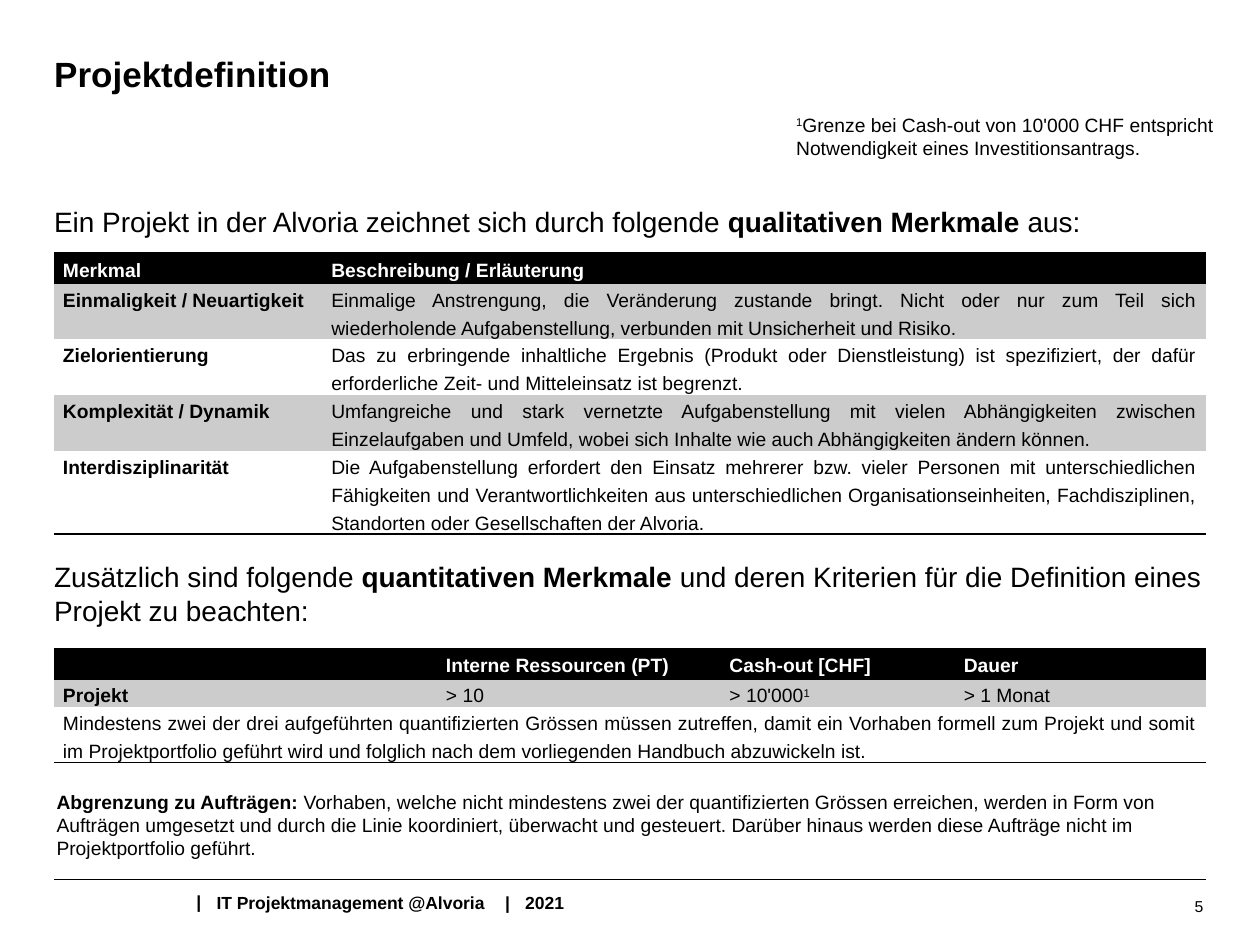
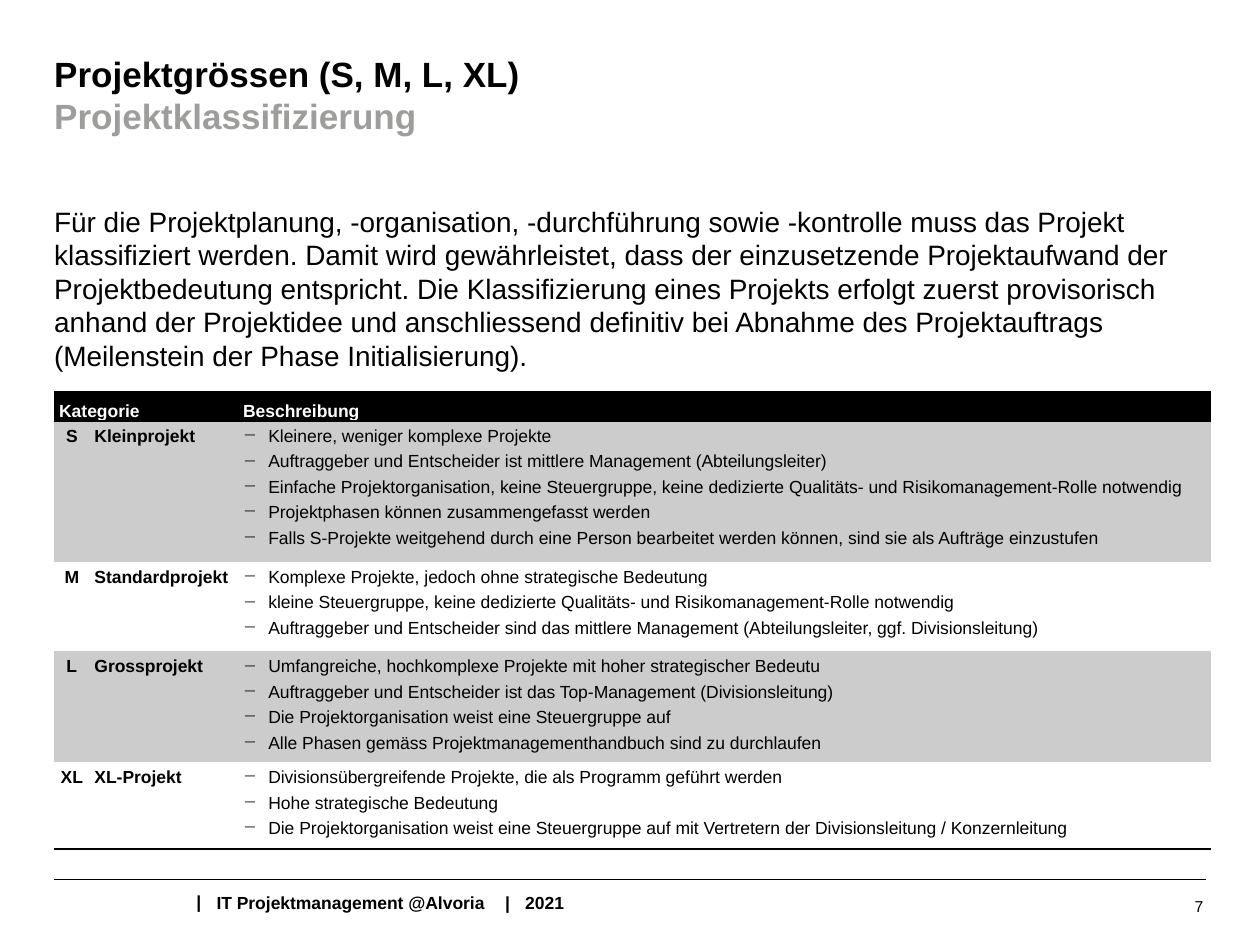
import pptx
import pptx.dml.color
import pptx.enum.shapes
import pptx.enum.text
import pptx.oxml.ns
import pptx.util
from lxml import etree
from pptx.util import Inches

BLACK, WHITE, BAND, SUBTITLE_GREY = "000000", "FFFFFF", "CCCCCC", "9D9D9C"
ALIGN = pptx.enum.text.PP_ALIGN
ANCHOR = pptx.enum.text.MSO_ANCHOR
NO_STYLE_NO_GRID = "{2D5ABB26-0587-4C30-8999-92F81FD0307C}"
qn = pptx.oxml.ns.qn
rgb = pptx.dml.color.RGBColor.from_string


def write(paragraph, text, size, color=BLACK, bold=False, **layout):
    """Fill a paragraph; *...* switches the weight, ^...^ is superscript."""
    for name, value in layout.items():
        setattr(paragraph, name, value)
    for i, part in enumerate(text.split("*")):
        for j, piece in enumerate(part.split("^")):
            if not piece:
                continue
            run = paragraph.add_run()
            run.text = piece
            font_format = {"name": "Arial", "size": pptx.util.Pt(size), "bold": bold != bool(i % 2)}
            for name, value in font_format.items():
                setattr(run.font, name, value)
            run.font.color.rgb = rgb(color)
            if j % 2:
                run._r.get_or_add_rPr().set("baseline", "30000")
    if not text:
        etree.SubElement(paragraph._p, qn("a:endParaRPr"), sz=str(size * 100))


def add_grid(slide, grid):
    """Add a table with black header, grey bands and a closing rule."""
    rows, widths, heights = grid["rows"], grid["widths"], grid["heights"]
    left, top = grid["at"]
    frame = slide.shapes.add_table(
        len(rows), len(widths), Inches(left), Inches(top),
        Inches(sum(widths)), Inches(sum(heights)))
    table = frame.table
    table._tbl.tblPr.find(qn("a:tableStyleId")).text = NO_STYLE_NO_GRID
    for column, width in zip(table.columns, widths):
        column.width = Inches(width)
    for row, height in zip(table.rows, heights):
        row.height = Inches(height)
    for r, c_first, c_last in grid["merges"]:
        table.cell(r, c_first).merge(table.cell(r, c_last))
    for r, texts in enumerate(rows):
        for c, content in enumerate(texts):
            cell = table.cell(r, c)
            cell_format = {
                "margin_left": Inches(grid["inset"]), "margin_right": Inches(grid["inset"]),
                "margin_top": 0, "margin_bottom": 0,
                "vertical_anchor": grid["header_anchor"] if r == 0 else ANCHOR.TOP}
            for name, value in cell_format.items():
                setattr(cell, name, value)
            for edge in (["a:lnT", "a:lnB"] if r == 0 else ["a:lnB"] if r == len(rows) - 1 else []):
                rule = etree.SubElement(cell._tc.get_or_add_tcPr(), qn(edge), w="12700")
                rule_fill = etree.SubElement(rule, qn("a:solidFill"))
                etree.SubElement(rule_fill, qn("a:srgbClr"), val=BLACK)
            if r == 0 or r % 2:
                cell.fill.solid()
                cell.fill.fore_color.rgb = rgb(BLACK if r == 0 else BAND)
            else:
                cell.fill.background()
            bulleted = isinstance(content, list)
            bold = r == 0 or (r, c) in grid["bold"]
            for k, line in enumerate(content if bulleted else [content]):
                frame_text = cell.text_frame
                paragraph = frame_text.add_paragraph() if k else frame_text.paragraphs[0]
                if bulleted:
                    properties = paragraph._p.get_or_add_pPr()
                    properties.set("marL", str(Inches(0.2)))
                    properties.set("indent", str(-Inches(0.2)))
                    etree.SubElement(properties, qn("a:buChar"), char="−")
                align = grid["aligns"][c] if r else grid["header_align"]
                write(paragraph, line, grid["size"], WHITE if r == 0 else BLACK, bold,
                      alignment=align, line_spacing=1.3)


qualitative = {
    "at": (0.43, 2.01), "widths": [2.13, 7.01], "heights": [0.24, 0.44, 0.44, 0.44, 0.66],
    "inset": 0.07, "size": 11, "merges": [], "bold": [(r, 0) for r in range(1, 5)],
    "header_anchor": ANCHOR.TOP, "header_align": ALIGN.JUSTIFY, "aligns": [ALIGN.JUSTIFY] * 2,
    "rows": [
        ["Merkmal", "Beschreibung / Erläuterung"],
        ["Einmaligkeit / Neuartigkeit",
         "Einmalige Anstrengung, die Veränderung zustande bringt. Nicht oder nur zum Teil sich "
         "wiederholende Aufgabenstellung, verbunden mit Unsicherheit und Risiko."],
        ["Zielorientierung",
         "Das zu erbringende inhaltliche Ergebnis (Produkt oder Dienstleistung) ist spezifiziert, "
         "der dafür erforderliche Zeit- und Mitteleinsatz ist begrenzt."],
        ["Komplexität / Dynamik",
         "Umfangreiche und stark vernetzte Aufgabenstellung mit vielen Abhängigkeiten zwischen "
         "Einzelaufgaben und Umfeld, wobei sich Inhalte wie auch Abhängigkeiten ändern können."],
        ["Interdisziplinarität",
         "Die Aufgabenstellung erfordert den Einsatz mehrerer bzw. vieler Personen mit "
         "unterschiedlichen Fähigkeiten und Verantwortlichkeiten aus unterschiedlichen "
         "Organisationseinheiten, Fachdisziplinen, Standorten oder Gesellschaften der Alvoria."],
    ],
}
quantitative = {
    "at": (0.43, 5.15), "widths": [3.04, 2.25, 1.86, 1.99], "heights": [0.24, 0.22, 0.44],
    "inset": 0.07, "size": 11, "merges": [(2, 0, 3)], "bold": [(1, 0)],
    "header_anchor": ANCHOR.TOP, "header_align": ALIGN.JUSTIFY, "aligns": [ALIGN.JUSTIFY] * 4,
    "rows": [
        ["", "Interne Ressourcen (PT)", "Cash-out [CHF]", "Dauer"],
        ["Projekt", "> 10", "> 10'000^1^", "> 1 Monat"],
        ["Mindestens zwei der drei aufgeführten quantifizierten Grössen müssen zutreffen, damit ein "
         "Vorhaben formell zum Projekt und somit im Projektportfolio geführt wird und folglich nach "
         "dem vorliegenden Handbuch abzuwickeln ist.", "", "", ""],
    ],
}
categories = {
    "at": (0.43, 3.11), "widths": [0.28, 1.18, 7.72], "heights": [0.23, 1.12, 0.71, 0.88, 0.69],
    "inset": 0.04, "size": 10, "merges": [(0, 0, 1)],
    "bold": [(r, c) for r in range(1, 5) for c in range(2)],
    "header_anchor": ANCHOR.BOTTOM, "header_align": ALIGN.LEFT,
    "aligns": [ALIGN.CENTER, ALIGN.LEFT, ALIGN.LEFT],
    "rows": [
        ["Kategorie", "", "Beschreibung"],
        ["S", "Kleinprojekt", [
            "Kleinere, weniger komplexe Projekte",
            "Auftraggeber und Entscheider ist mittlere Management (Abteilungsleiter)",
            "Einfache Projektorganisation, keine Steuergruppe, keine dedizierte Qualitäts- und "
            "Risikomanagement-Rolle notwendig",
            "Projektphasen können zusammengefasst werden",
            "Falls S-Projekte weitgehend durch eine Person bearbeitet werden können, sind sie als "
            "Aufträge einzustufen"]],
        ["M", "Standardprojekt", [
            "Komplexe Projekte, jedoch ohne strategische Bedeutung",
            "kleine Steuergruppe, keine dedizierte Qualitäts- und Risikomanagement-Rolle notwendig",
            "Auftraggeber und Entscheider sind das mittlere Management (Abteilungsleiter, ggf. "
            "Divisionsleitung)"]],
        ["L", "Grossprojekt", [
            "Umfangreiche, hochkomplexe Projekte mit hoher strategischer Bedeutu",
            "Auftraggeber und Entscheider ist das Top-Management (Divisionsleitung)",
            "Die Projektorganisation weist eine Steuergruppe auf",
            "Alle Phasen gemäss Projektmanagementhandbuch sind zu durchlaufen"]],
        ["XL", "XL-Projekt", [
            "Divisionsübergreifende Projekte, die als Programm geführt werden",
            "Hohe strategische Bedeutung",
            "Die Projektorganisation weist eine Steuergruppe auf mit Vertretern der "
            "Divisionsleitung / Konzernleitung"]],
    ],
}

TITLE_AREA, SUBTITLE_AREA, BODY_AREA = (0.43, 0.37, 9.14, 0.39), (0.43, 0.7, 9.14, 0.39), (0.43, 1.62, 9.14, 4.49)
HEADING_INSETS, BODY_INSETS = (0, 0.05, 0.1, 0.05), (0, 0, 0, 0)
HEADING, SUBHEADING = {"size": 20, "bold": True}, {"size": 20, "bold": True, "color": SUBTITLE_GREY}
BODY = {"size": 16}

pages = [
    {"layout": 1, "number": "5", "grids": [qualitative, quantitative],
     "placeholders": [
         (0, TITLE_AREA, HEADING_INSETS, HEADING, ["Projektdefinition"]),
         (1, BODY_AREA, BODY_INSETS, BODY, [
             "Ein Projekt in der Alvoria zeichnet sich durch folgende *qualitativen Merkmale *aus:",
             "Zusätzlich sind folgende *quantitativen Merkmale *und deren Kriterien für die "
             "Definition eines Projekt zu beachten:"])],
     "notes": [
         ((0.35, 6.22, 9.22, 0.66),
          "*Abgrenzung zu Aufträgen: *Vorhaben, welche nicht mindestens zwei der quantifizierten "
          "Grössen erreichen, werden in Form von Aufträgen umgesetzt und durch die Linie "
          "koordiniert, überwacht und gesteuert. Darüber hinaus werden diese Aufträge nicht im "
          "Projektportfolio geführt."),
         ((6.22, 0.85, 3.78, 0.47),
          "^1^Grenze bei Cash-out von 10'000 CHF entspricht Notwendigkeit eines "
          "Investitionsantrags.")]},
    {"layout": 3, "number": "7", "grids": [categories], "notes": [],
     "placeholders": [
         (0, TITLE_AREA, HEADING_INSETS, HEADING, ["Projektgrössen (S, M, L, XL)"]),
         (1, SUBTITLE_AREA, HEADING_INSETS, SUBHEADING, ["Projektklassifizierung"]),
         (2, BODY_AREA, BODY_INSETS, BODY, [
             "Für die Projektplanung, -organisation, -durchführung sowie -kontrolle muss das Projekt "
             "klassifiziert werden. Damit wird gewährleistet, dass der einzusetzende Projektaufwand "
             "der Projektbedeutung entspricht. Die Klassifizierung eines Projekts erfolgt zuerst "
             "provisorisch anhand der Projektidee und anschliessend definitiv bei Abnahme des "
             "Projektauftrags (Meilenstein der Phase Initialisierung)."])]},
]

deck = pptx.Presentation()
deck.slide_width, deck.slide_height = Inches(10), Inches(7.5)

for page in pages:
    slide = deck.slides.add_slide(deck.slide_layouts[page["layout"]])

    footer_rule = slide.shapes.add_connector(
        pptx.enum.shapes.MSO_CONNECTOR.STRAIGHT, Inches(0.43), Inches(6.98), Inches(9.57), Inches(6.98))
    footer_rule.line.color.rgb = rgb(BLACK)
    footer_rule.line.width = pptx.util.Pt(0.75)
    etree.SubElement(footer_rule._element.spPr, qn("a:effectLst"))

    for index, area, insets, style, lines in page["placeholders"]:
        holder = slide.placeholders[index]
        for name, value in zip(("left", "top", "width", "height"), area):
            setattr(holder, name, Inches(value))
        frame = holder.text_frame
        frame_format = dict(zip(("margin_left", "margin_top", "margin_right", "margin_bottom"),
                                map(Inches, insets)))
        frame_format.update(vertical_anchor=ANCHOR.TOP, word_wrap=True,
                            auto_size=pptx.enum.text.MSO_AUTO_SIZE.NONE)
        for name, value in frame_format.items():
            setattr(frame, name, value)
        for k, line in enumerate(lines):
            paragraph = frame.add_paragraph() if k else frame.paragraphs[0]
            properties = paragraph._p.get_or_add_pPr()
            properties.set("marL", "0")
            properties.set("indent", "0")
            etree.SubElement(properties, qn("a:buNone"))
            # The second paragraph clears the table that stands between the two.
            write(paragraph, line, **style, alignment=ALIGN.LEFT,
                  space_before=pptx.util.Pt(184 if k else 0))

    for grid in page["grids"]:
        add_grid(slide, grid)

    texts = [(area, note, {"size": 11}, ANCHOR.TOP) for area, note in page["notes"]]
    texts += [
        ((1.46, 7.02, 0.24, 0.27), "|", {"size": 10, "bold": True}, ANCHOR.TOP),
        ((1.62, 7.03, 2.98, 0.27), "IT Projektmanagement @Alvoria\t|\t2021",
         {"size": 10, "bold": True}, ANCHOR.TOP),
        ((7.32, 6.95, 2.33, 0.48), page["number"], {"size": 9, "alignment": ALIGN.RIGHT}, ANCHOR.MIDDLE),
    ]
    for area, text, style, anchor in texts:
        frame = slide.shapes.add_textbox(*map(Inches, area)).text_frame
        frame.word_wrap = len(text) > 1
        frame.vertical_anchor = anchor
        paragraph = frame.paragraphs[0]
        if "\t" in text:
            tabs = etree.SubElement(paragraph._p.get_or_add_pPr(), qn("a:tabLst"))
            for stop in (2.29, 2.45):
                etree.SubElement(tabs, qn("a:tab"), pos=str(Inches(stop)), algn="l")
        write(paragraph, text, **style)

deck.save("out.pptx")
